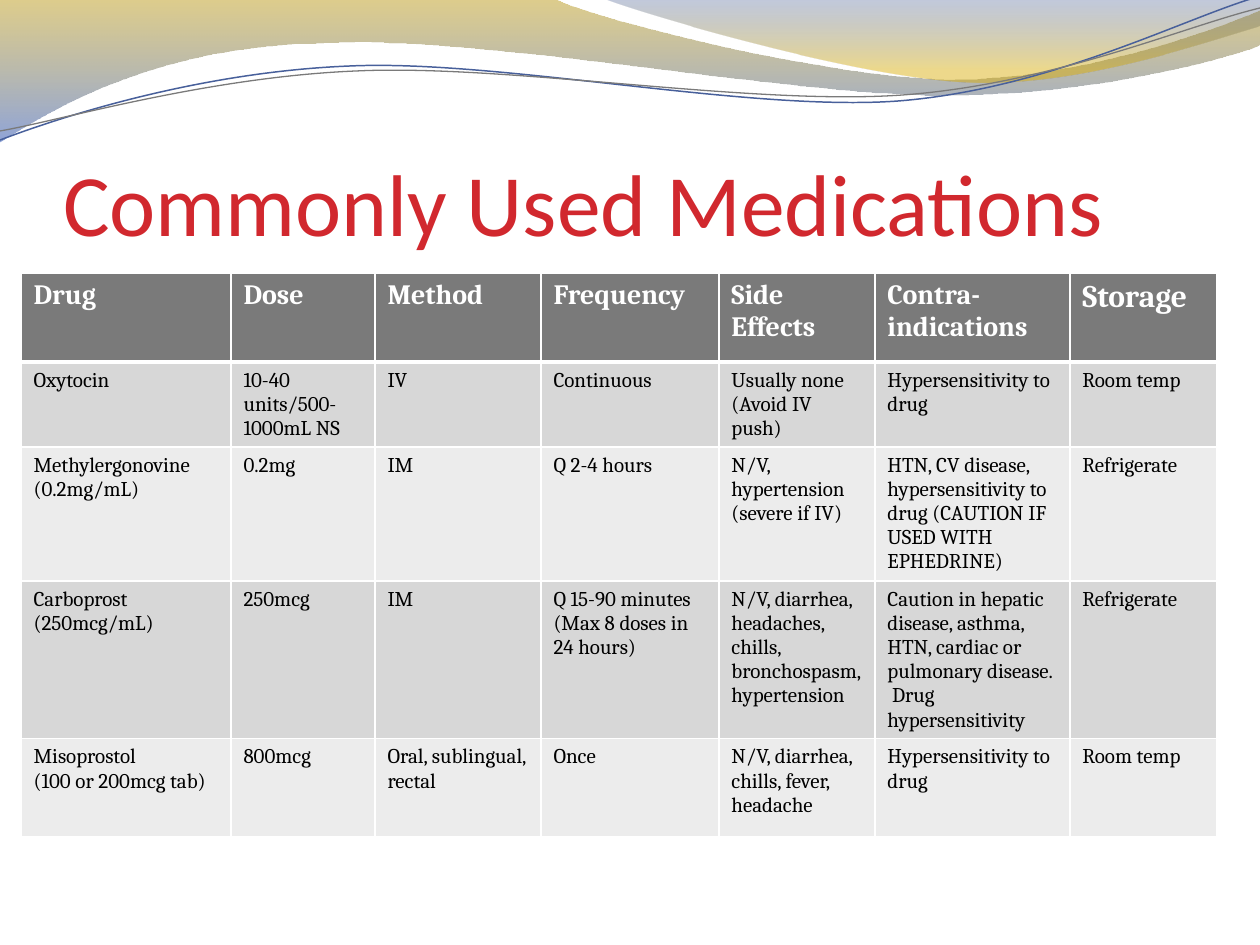
from pptx import Presentation
from pptx.dml.color import RGBColor
from pptx.enum.text import MSO_ANCHOR, MSO_AUTO_SIZE, PP_ALIGN
from pptx.oxml.ns import qn
from pptx.util import Pt
from lxml.etree import SubElement

PX = 914400 // 126
WHITE = RGBColor(0xFF, 0xFF, 0xFF)
BLACK = RGBColor(0, 0, 0)
RED = RGBColor(0xD1, 0x28, 0x2E)
GREY = RGBColor(0x7A, 0x7A, 0x7A)
NAVY = RGBColor(0x48, 0x60, 0x9B)
GOLD = RGBColor(0xB6, 0x90, 0x00)
BLUE = RGBColor(0x33, 0x59, 0xB7)
DEEP = RGBColor(0x32, 0x4C, 0x8D)
AMBER = RGBColor(0xD9, 0xAC, 0x00)
BANDS = [RGBColor(0xD7, 0xD7, 0xD7), RGBColor(0xEC, 0xEC, 0xEC)]

TITLE = "Commonly Used Medications"
HEAD = ["Drug", "Dose", "Method", "Frequency", "Side Effects", "Contra-indications", "Storage"]
DRUGS = [
    ["Oxytocin", "10-40 units/500-1000mL NS", "IV", "Continuous",
     "Usually none (Avoid IV push)", "Hypersensitivity to drug", "Room temp"],
    ["Methylergonovine\n(0.2mg/mL)", "0.2mg", "IM", "Q 2-4 hours",
     "N/V, hypertension (severe if IV)",
     "HTN, CV disease, hypersensitivity to drug (CAUTION IF USED WITH EPHEDRINE)", "Refrigerate"],
    ["Carboprost\n(250mcg/mL)", "250mcg", "IM", "Q 15-90 minutes\n(Max 8 doses in 24 hours)",
     "N/V, diarrhea, headaches, chills, bronchospasm, hypertension",
     "Caution in hepatic disease, asthma, HTN, cardiac or pulmonary disease.   Drug hypersensitivity",
     "Refrigerate"],
    ["Misoprostol\n(100 or 200mcg tab)", "800mcg", "Oral, sublingual, rectal", "Once",
     "N/V, diarrhea, chills, fever, headache", "Hypersensitivity to drug", "Room temp"],
]
COLS = [210, 144, 166, 178, 156, 195, 147]
ROWS = [89, 85, 134, 157, 98]

WAVES = [
    ([[(0, 0)], [(554, -1)], [(600, 21), (837, 79), (955, 79)],
      [(1075, 79), (1207, 33), (1260, 11)], [(1261, 45)],
      [(1239, 55), (1096, 96), (940, 95)], [(784, 95), (481, 35), (324, 43)],
      [(163, 45), (58, 105), (-1, 142)]],
     [(0, GOLD, 45), (1, BLUE, 55)]),
    ([[(604, -1)], [(641, 14), (859, 78), (969, 82)],
      [(1079, 87), (1211, 40), (1260, 26)], [(1260, 0)]],
     [(0, DEEP, 30), (0.8, AMBER, 45)]),
]
LINES = [
    ([[(0, 140)], [(60, 117), (199, 72), (349, 66)],
      [(498, 59), (747, 112), (898, 101)], [(1050, 89), (1182, 19), (1257, -3)]], NAVY, 0.85),
    ([[(0, 131)], [(59, 121), (207, 77), (357, 71)],
      [(508, 64), (752, 106), (903, 95)], [(1053, 84), (1185, 26), (1260, 8)]], GREY, 0.75),
]


def draw(slide, steps, close):
    dots = [(x * PX, y * PX) for step in steps for x, y in step]
    pen = slide.shapes.build_freeform(*dots[0])
    pen.add_line_segments(dots[1:], close=close)
    shape = pen.convert_to_shape()
    shape.shadow.inherit = False
    edges = iter(list(shape.element.spPr.iter(qn("a:lnTo"))))
    for step in steps[1:]:
        first, *rest = [next(edges) for _ in step]
        if rest:
            first.tag = qn("a:cubicBezTo")
            for part in rest:
                first.append(part[0])
                part.getparent().remove(part)
    return shape


def wave(slide, steps, stops):
    shape = draw(slide, steps, True)
    shape.line.fill.background()
    shape.fill.gradient()
    shape.fill.gradient_angle = 270
    for stop, (place, color, _) in zip(shape.fill.gradient_stops, stops):
        stop.position = place
        stop.color.rgb = color
    tints = shape.element.spPr.iter(qn("a:srgbClr"))
    for tint, (_, _, alpha) in zip(tints, stops):
        SubElement(tint, qn("a:alpha")).set("val", str(alpha * 1000))


def strand(slide, steps, color, width):
    shape = draw(slide, steps, False)
    shape.fill.background()
    shape.line.color.rgb = color
    shape.line.width = Pt(width)


def write(frame, text, size, color, font="Cambria", bold=False):
    frame.text = text
    for para in frame.paragraphs:
        para.alignment = PP_ALIGN.LEFT
        for run in para.runs:
            run.font.name = font
            run.font.size = Pt(size)
            run.font.bold = bold
            run.font.color.rgb = color


def edge(cell, base):
    props = cell._tc.get_or_add_tcPr()
    for side, width in (("L", 1), ("R", 1), ("T", 1), ("B", base)):
        line = SubElement(props, qn("a:ln" + side), w=str(Pt(width)))
        fill = SubElement(line, qn("a:solidFill"))
        SubElement(fill, qn("a:srgbClr"), val=str(WHITE))


def grid(slide):
    table = slide.shapes.add_table(len(ROWS), len(COLS), 21 * PX, 273 * PX,
                                   sum(COLS) * PX, sum(ROWS) * PX).table
    for col, width in zip(table.columns, COLS):
        col.width = width * PX
    for r, (row, high, texts) in enumerate(zip(table.rows, ROWS, [HEAD, *DRUGS])):
        row.height = high * PX
        top = r == 0
        for cell, text in zip(row.cells, texts):
            size = 12 if not top else 18 if text == "Storage" else 16
            write(cell.text_frame, text, size, WHITE if top else BLACK, bold=top)
            edge(cell, 3 if top else 1)
            cell.fill.solid()
            cell.fill.fore_color.rgb = GREY if top else BANDS[(r - 1) % 2]


def main():
    deck = Presentation()
    deck.slide_width, deck.slide_height = 1260 * PX, 945 * PX
    slide = deck.slides.add_slide(deck.slide_layouts[5])
    for steps, stops in WAVES:
        wave(slide, steps, stops)
    for steps, color, width in LINES:
        strand(slide, steps, color, width)
    title = slide.shapes.title
    title.left, title.top, title.width, title.height = (n * PX for n in (63, 97, 1134, 157))
    frame = title.text_frame
    write(frame, TITLE, 50, RED, font="Calibri")
    frame.auto_size = MSO_AUTO_SIZE.NONE
    frame.vertical_anchor = MSO_ANCHOR.BOTTOM
    frame.margin_left = frame.margin_right = frame.margin_bottom = 0
    grid(slide)
    deck.save("out.pptx")


if __name__ == "__main__":
    main()
